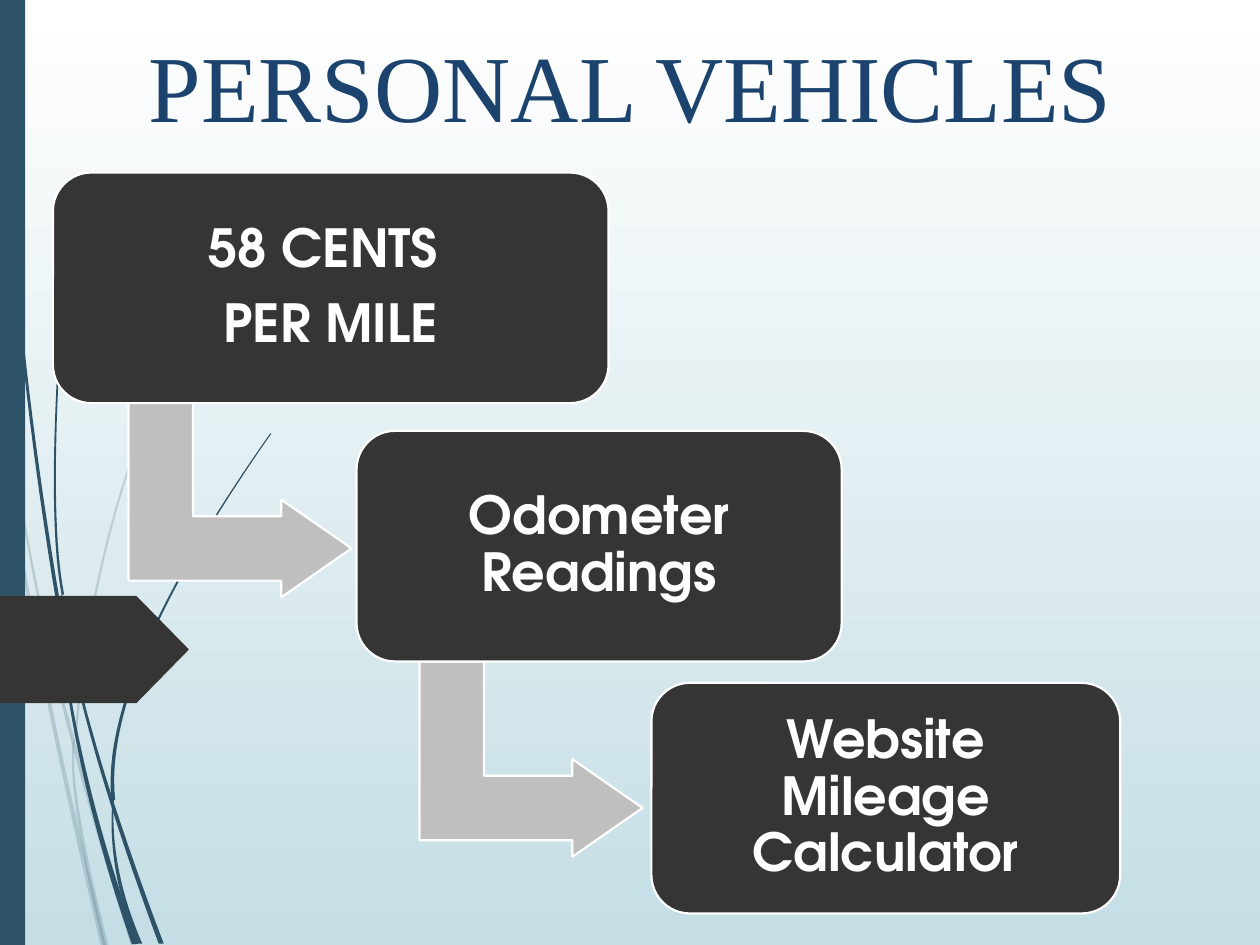
import pptx
import pptx.util
import pptx.dml.color
import pptx.enum.shapes
import pptx.enum.text
import lxml.etree

PX = 9144  # 100 px to the inch
NAVY, CHARCOAL, GREY, WHITE = "2E5369", "353535", "BFBFBF", "FFFFFF"
SHAPES = pptx.enum.shapes.MSO_SHAPE
color = pptx.dml.color.RGBColor.from_string


def paint(shape, fill, outline=None):
    """Give the shape a flat fill and an optional outline, without shadow."""
    shape.shadow.inherit = False
    shape.fill.solid()
    shape.fill.fore_color.rgb = color(fill)
    if outline:
        shape.line.color.rgb = color(outline)
        shape.line.width = pptx.util.Pt(1.25)
    else:
        shape.line.fill.background()


def draw_blade(tip, middle, root, root_width, samples=24):
    """Draw a curve through three points that widens from tip to root."""
    left_edge, right_edge = [], []
    for step in range(samples + 1):
        t = step / samples
        # Quadratic curve that meets the middle point at t = 0.5
        x, y = (a * (1 - t) * (1 - 2 * t) + b * 4 * t * (1 - t) + c * t * (2 * t - 1)
                for a, b, c in zip(tip, middle, root))
        half_width = (1 + (root_width - 1) * t) / 2
        left_edge.append(((x - half_width) * PX, y * PX))
        right_edge.append(((x + half_width) * PX, y * PX))
    outline = left_edge + right_edge[::-1]
    builder = slide.shapes.build_freeform(*outline[0], scale=1)
    builder.add_line_segments(outline[1:], close=True)
    return builder.convert_to_shape()


deck = pptx.Presentation()
deck.slide_width, deck.slide_height = 1000 * PX, 750 * PX
slide = deck.slides.add_slide(deck.slide_layouts[0])
subtitle = slide.placeholders[1].element
subtitle.getparent().remove(subtitle)

sky = slide.background.fill
sky.gradient()
sky.gradient_angle = 270
for stop, tone in zip(sky.gradient_stops, (WHITE, "C5DEE5")):
    stop.color.rgb = color(tone)

# Grass: tip, middle, root and root width of each blade
pale_grass = [
    ((0, 290), (22, 469), (82, 750), 4),
    ((10, 345), (42, 525), (106, 750), 4),
    ((217, 153), (110, 349), (60, 584), 2),
    ((59, 586), (62, 646), (84, 750), 4),
]
dark_grass = [
    ((2, 0), (14, 233), (46, 477), 3),
    ((46, 477), (66, 608), (107, 749), 5),
    ((49, 472), (75, 591), (128, 749), 4),
    ((58, 141), (44, 349), (50, 472), 2),
    ((215, 344), (116, 513), (90, 635), 3),
    ((90, 633), (93, 690), (111, 749), 4),
]
for grass, opacity in ((pale_grass, 20), (dark_grass, 100)):
    for curve in grass:
        blade = draw_blade(*curve)
        paint(blade, NAVY)
        tint = blade.element.spPr.find(".//" + pptx.oxml.ns.qn("a:srgbClr"))
        lxml.etree.SubElement(tint, pptx.oxml.ns.qn("a:alpha"), val=str(opacity * 1000))

side_band = slide.shapes.add_shape(SHAPES.RECTANGLE, 0, 0, 20 * PX, 750 * PX)
paint(side_band, NAVY)
page_marker = slide.shapes.add_shape(SHAPES.PENTAGON, 0, 473 * PX, 150 * PX, 85 * PX)
page_marker.adjustments[0] = 0.49
paint(page_marker, CHARCOAL)

heading = slide.shapes.title
heading.left, heading.top, heading.width, heading.height = (n * PX for n in (108, 0, 908, 117))
heading.text_frame.text = "PERSONAL VEHICLES"
heading.text_frame.auto_size = pptx.enum.text.MSO_AUTO_SIZE.NONE
heading.text_frame.vertical_anchor = pptx.enum.text.MSO_ANCHOR.BOTTOM
heading_line = heading.text_frame.paragraphs[0]
heading_line.alignment = pptx.enum.text.PP_ALIGN.LEFT
heading_line.font.name = "Times New Roman"
heading_line.font.size = pptx.util.Pt(54)
heading_line.font.color.rgb = color("1C436D")

# Staircase of steps, each joined to the next by a bent arrow
for left, top in ((113, 308), (344, 514)):
    arrow = slide.shapes.add_shape(SHAPES.BENT_UP_ARROW, left * PX, top * PX, 155 * PX, 177 * PX)
    arrow.rotation = 90
    for index, ratio in enumerate((0.33, 0.25, 0.36)):
        arrow.adjustments[index] = ratio
    paint(arrow, GREY, WHITE)

steps = [
    (42, 137, 441, ["58 CENTS ", "PER MILE"]),
    (283, 342, 385, ["Odometer Readings"]),
    (517, 542, 372, ["Website Mileage Calculator"]),
]
step_font = {"name": "TeX Gyre Adventor", "size": pptx.util.Pt(30), "bold": True}
for left, top, width, lines in steps:
    step = slide.shapes.add_shape(
        SHAPES.ROUNDED_RECTANGLE, left * PX, top * PX, width * PX, 183 * PX)
    paint(step, CHARCOAL, WHITE)
    frame = step.text_frame
    frame.word_wrap = True
    frame.vertical_anchor = pptx.enum.text.MSO_ANCHOR.MIDDLE
    for side in ("left", "top", "right", "bottom"):
        setattr(frame, "margin_" + side, 12 * PX)
    frame.text = "\n".join(lines)
    for line in frame.paragraphs:
        line.alignment = pptx.enum.text.PP_ALIGN.CENTER
        line.line_spacing = 0.9
        line.space_after = pptx.util.Pt(10.5)
        line.font.color.rgb = color(WHITE)
        for attribute, value in step_font.items():
            setattr(line.font, attribute, value)

deck.save("out.pptx")
